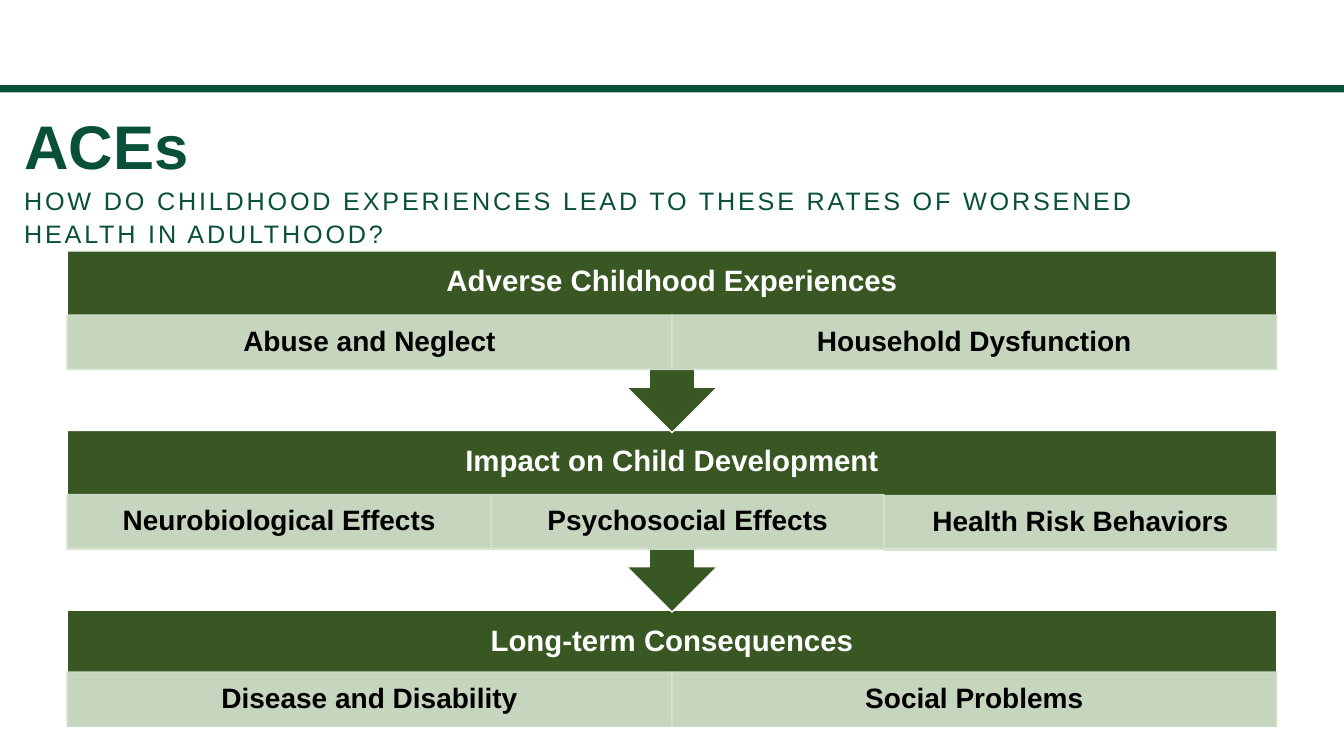
from dataclasses import dataclass
from itertools import accumulate

from lxml import etree
from pptx import Presentation
from pptx.dml.color import RGBColor
from pptx.enum.shapes import MSO_SHAPE
from pptx.enum.text import MSO_ANCHOR, PP_ALIGN
from pptx.oxml.ns import qn
from pptx.util import Pt

RECTANGLE = MSO_SHAPE.RECTANGLE
CALLOUT = MSO_SHAPE.UP_ARROW_CALLOUT
TOP, MIDDLE, BOTTOM = MSO_ANCHOR.TOP, MSO_ANCHOR.MIDDLE, MSO_ANCHOR.BOTTOM
LEFT, CENTER = PP_ALIGN.LEFT, PP_ALIGN.CENTER
EMU_PER_PX = 9525


@dataclass(frozen=True)
class Theme:
    font: str = "Arial"
    brand: str = "09503A"
    bar: str = "385723"
    cell: str = "D5E3CF"
    white: str = "FFFFFF"
    black: str = "000000"
    title_size: int = 44
    subtitle_size: int = 18
    header_size: int = 21
    cell_size: int = 20
    cell_opacity: int = 90


THEME = Theme()
STAGES = [
    {"header": "Adverse Childhood Experiences", "box": (64, 239, 1152, 173),
     "shape": CALLOUT, "cell_top": 61,
     "cells": [("Abuse and Neglect", 576, 0), ("Household Dysfunction", 576, 0)]},
    {"header": "Impact on Child Development", "box": (64, 410, 1152, 173),
     "shape": CALLOUT, "cell_top": 61,
     "cells": [("Neurobiological Effects", 404, 0),
               ("Psychosocial Effects", 374, 0),
               ("Health Risk Behaviors", 374, 1)]},
    {"header": "Long-term Consequences", "box": (64, 581, 1152, 112),
     "shape": RECTANGLE, "cell_top": 59,
     "cells": [("Disease and Disability", 576, 0), ("Social Problems", 576, 0)]},
]


def px(value):
    return value * EMU_PER_PX


def add_block(slide, kind, box, fill, line=None, opacity=100):
    shape = slide.shapes.add_shape(kind, *map(px, box))
    shape.shadow.inherit = False
    shape.fill.solid()
    shape.fill.fore_color.rgb = RGBColor.from_string(fill)
    if line:
        shape.line.color.rgb = RGBColor.from_string(line)
        shape.line.width = Pt(1)
    else:
        shape.line.fill.background()
    if opacity < 100:
        for color in list(shape._element.spPr.iter(qn("a:srgbClr"))):
            etree.SubElement(color, qn("a:alpha")).set("val", str(opacity * 1000))
    return shape


def write_text(shape, text, size, color, anchor, align, insets,
               bold=True, line_spacing=0.9, tracking=0):
    frame = shape.text_frame
    horizontal, vertical = map(px, insets)
    frame_format = {"word_wrap": True, "vertical_anchor": anchor,
                    "margin_left": horizontal, "margin_right": horizontal,
                    "margin_top": vertical, "margin_bottom": vertical}
    paragraph = frame.paragraphs[0]
    run = paragraph.add_run()
    run.text = text
    run.font.color.rgb = RGBColor.from_string(color)
    formats = [
        (frame, frame_format),
        (paragraph, {"alignment": align, "line_spacing": line_spacing}),
        (run.font, {"name": THEME.font, "size": Pt(size), "bold": bold}),
    ]
    for target, values in formats:
        for name, value in values.items():
            setattr(target, name, value)
    if tracking:
        run.font._element.set("spc", str(tracking * 100))


def add_text(slide, box, *arguments, **options):
    write_text(slide.shapes.add_textbox(*map(px, box)), *arguments, **options)


def add_stage(slide, stage):
    left, top, width, height = stage["box"]
    block = add_block(slide, stage["shape"], stage["box"], THEME.bar, THEME.white)
    if stage["shape"] == CALLOUT:
        block.rotation = 180
    add_text(slide, (left, top, width, 60), stage["header"], THEME.header_size,
             THEME.white, MIDDLE, CENTER, (15, 15))
    widths = [cell_width for _, cell_width, _ in stage["cells"]]
    lefts = accumulate(widths, initial=left)
    for cell_left, (label, cell_width, drop) in zip(lefts, stage["cells"]):
        box = (cell_left, top + stage["cell_top"] + drop, cell_width, 52)
        cell = add_block(slide, RECTANGLE, box, THEME.cell, THEME.cell,
                         THEME.cell_opacity)
        write_text(cell, label, THEME.cell_size, THEME.black, MIDDLE, CENTER, (15, 3))


def add_heading(slide, box):
    left, top, width, height = box
    add_text(slide, (left, top, width, 108), "ACEs", THEME.title_size,
             THEME.brand, TOP, LEFT, (4, 2))
    add_text(slide, (left, top + 63, width, height - 63),
             "HOW DO CHILDHOOD EXPERIENCES LEAD TO THESE RATES OF WORSENED "
             "HEALTH IN ADULTHOOD?", THEME.subtitle_size, THEME.brand, BOTTOM, LEFT,
             (4, 2), bold=False, line_spacing=1.1, tracking=2)


def main():
    presentation = Presentation()
    presentation.slide_width = px(1280)
    presentation.slide_height = px(720)
    slide = presentation.slides.add_slide(presentation.slide_layouts[6])
    add_block(slide, RECTANGLE, (-3, 81, 1283, 7), THEME.brand)
    for stage in reversed(STAGES):
        add_stage(slide, stage)
    add_heading(slide, (19, 109, 1164, 130))
    presentation.save("out.pptx")


if __name__ == "__main__":
    main()
